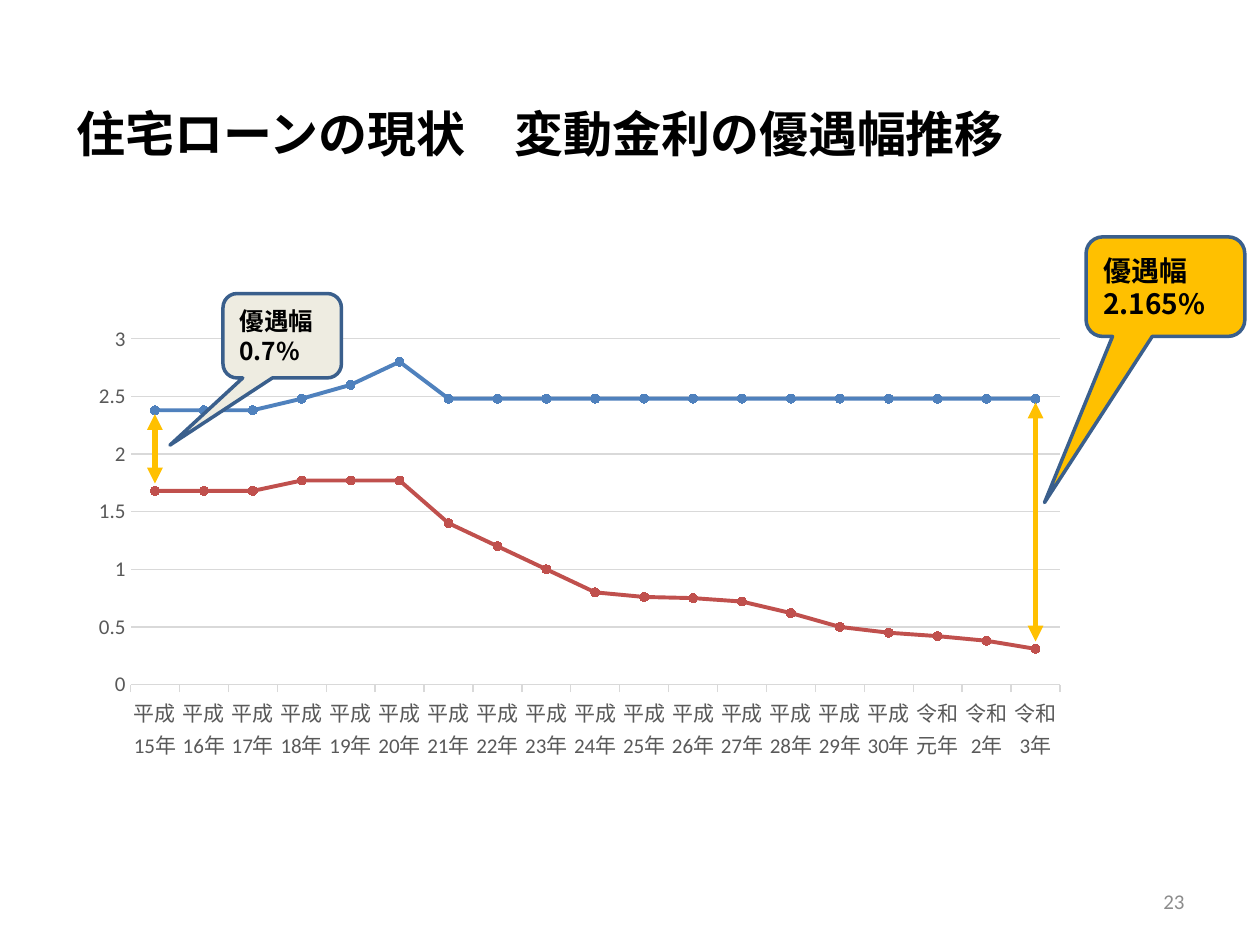
from lxml import etree
from pptx import Presentation
from pptx import util as u
from pptx.chart import data as chart_data
from pptx.dml import color
from pptx.enum import chart as charts, shapes, text
from pptx.oxml import ns

# Content
HEADING = "住宅ローンの現状　変動金利の優遇幅推移"
PAGE = "23"
YEARS = [f"平成{n}年" for n in range(15, 31)] + ["令和元年", "令和2年", "令和3年"]
RATES = {
    "Series 1": [2.38] * 3 + [2.48, 2.6, 2.8] + [2.48] * 13,
    "Series 2": [1.68] * 3 + [1.77] * 3 + [1.4, 1.2, 1, 0.8, 0.76, 0.75, 0.72,
                                           0.62, 0.5, 0.45, 0.42, 0.38, 0.31],
}
# Callouts: lines, box, pointer and corner adjustments, fill, text size
LATEST_GAP = (["優遇幅", "2.165%"], (8.62, 1.88, 1.26, 0.79),
              (-0.762, 2.169, 0.167), "gold", "latest")
FIRST_GAP = (["優遇幅", "0.7%"], (1.77, 2.33, 0.94, 0.67),
             (-0.948, 1.296, 0.167), "cream", "first")

THEME = {
    "colors": {"gold": "FFC000", "cream": "EEECE1", "edge": "3A5F8C", "ink": "000000",
               "axis": "595959", "grid": "D9D9D9", "page": "8C8C8C",
               "Series 1": "4F81BD", "Series 2": "C0504D"},
    "sizes": {"heading": 28, "latest": 16, "first": 14, "axis": 12, "page": 12},
    "latin": "Calibri", "japanese": "Noto Sans CJK JP",
}

# Layout, in inches and as shares of the chart
SLIDE = (10, 7.5)
CHART = (0.67, 1.35, 7.95, 4.8)
PLOT = {"x": 0.046, "y": 0.279, "w": 0.928, "h": 0.572}
TOP_RATE = 3
ARROW_GAPS = (0.03, -0.06)


def rgb(name):
    return color.RGBColor.from_string(THEME["colors"][name])


def inches(values):
    return [u.Inches(v) for v in values]


def apply(target, values):
    for name, value in values.items():
        setattr(target, name, value)


def style_font(font, size, ink, face, bold=False):
    apply(font, {"size": u.Pt(THEME["sizes"][size]), "bold": bold, "name": THEME[face]})
    font.color.rgb = rgb(ink)


def style_line(line, ink, width):
    line.color.rgb = rgb(ink)
    line.width = u.Pt(width)


def write(shape, lines, size, ink="ink", face="japanese", bold=True,
          align=text.PP_ALIGN.LEFT, anchor=text.MSO_ANCHOR.MIDDLE):
    frame = shape.text_frame
    apply(frame, {"word_wrap": True, "vertical_anchor": anchor, "text": "\n".join(lines)})
    for paragraph in frame.paragraphs:
        paragraph.alignment = align
        for run in paragraph.runs:
            style_font(run.font, size, ink, face, bold)
            etree.SubElement(run.font._element, ns.qn("a:ea"), typeface=THEME["japanese"])


def add_rates(slide):
    rates = chart_data.CategoryChartData()
    rates.categories = YEARS
    for name, values in RATES.items():
        rates.add_series(name, values)
    chart = slide.shapes.add_chart(charts.XL_CHART_TYPE.LINE_MARKERS,
                                   *inches(CHART), rates).chart
    apply(chart, {"has_title": False, "has_legend": False})
    style_font(chart.font, "axis", "axis", "latin")

    # Axes and grid
    years, scale = chart.category_axis, chart.value_axis
    apply(years, {"major_tick_mark": charts.XL_TICK_MARK.OUTSIDE})
    apply(scale, {"minimum_scale": 0, "maximum_scale": TOP_RATE, "major_unit": 0.5,
                  "major_tick_mark": charts.XL_TICK_MARK.NONE})
    apply(scale.tick_labels, {"number_format": "General", "number_format_is_linked": False})
    for axis in (years, scale):
        style_font(axis.tick_labels.font, "axis", "axis", "latin")
    style_line(years.format.line, "grid", 0.75)
    scale.format.line.fill.background()
    style_line(scale.major_gridlines.format.line, "grid", 0.75)

    # Series
    chart.plots[0].vary_by_categories = False
    for series in chart.plots[0].series:
        series.smooth = False
        style_line(series.format.line, series.name, 2.25)
        apply(series.marker, {"style": charts.XL_MARKER_STYLE.CIRCLE, "size": 5})
        for part in (series.marker.format.fill, series.marker.format.line.fill):
            part.solid()
            part.fore_color.rgb = rgb(series.name)

    # Fixed plot area
    area = chart._chartSpace.chart.plotArea
    for old in area.findall(ns.qn("c:layout")):
        area.remove(old)
    layout = etree.Element(ns.qn("c:layout"))
    area.insert(0, layout)
    manual = etree.SubElement(layout, ns.qn("c:manualLayout"))
    settings = {"layoutTarget": "inner", "xMode": "edge", "yMode": "edge", **PLOT}
    for tag, value in settings.items():
        etree.SubElement(manual, ns.qn(f"c:{tag}"), val=str(value))


def point(index, rate):
    left, top, width, height = CHART
    x = left + width * (PLOT["x"] + PLOT["w"] * (index + 0.5) / len(YEARS))
    y = top + height * (PLOT["y"] + PLOT["h"] * (1 - rate / TOP_RATE))
    return x, y


def add_gap_arrow(slide, index):
    ends = []
    for values, gap in zip(RATES.values(), ARROW_GAPS):
        x, y = point(index, values[index])
        ends += [x, y + gap]
    arrow = slide.shapes.add_connector(shapes.MSO_CONNECTOR.STRAIGHT, *inches(ends))
    style_line(arrow.line, "gold", 3)
    for end in ("a:headEnd", "a:tailEnd"):
        etree.SubElement(arrow.line._get_or_add_ln(), ns.qn(end), type="triangle")
    etree.SubElement(arrow._element.spPr, ns.qn("a:effectLst"))


def add_callout(slide, lines, box, adjustments, fill, size):
    callout = slide.shapes.add_shape(shapes.MSO_SHAPE.ROUNDED_RECTANGULAR_CALLOUT, *inches(box))
    for i, value in enumerate(adjustments):
        callout.adjustments[i] = value
    callout.shadow.inherit = False
    callout.fill.solid()
    callout.fill.fore_color.rgb = rgb(fill)
    style_line(callout.line, "edge", 2)
    write(callout, lines, size)


def main():
    deck = Presentation()
    deck.slide_width, deck.slide_height = inches(SLIDE)
    slide = deck.slides.add_slide(deck.slide_layouts[6])

    add_rates(slide)
    for index in (len(YEARS) - 1, 0):
        add_gap_arrow(slide, index)
    add_callout(slide, *LATEST_GAP)

    # Heading
    heading = slide.shapes.add_textbox(*inches((0.51, 0.77, 7.87, 0.57)))
    write(heading, [HEADING], "heading", anchor=text.MSO_ANCHOR.TOP)
    add_callout(slide, *FIRST_GAP)

    # Page number
    page = slide.shapes.add_textbox(*inches((7.17, 6.95, 2.33, 0.4)))
    write(page, [PAGE], "page", "page", "latin", False, text.PP_ALIGN.RIGHT)

    deck.save("out.pptx")


if __name__ == "__main__":
    main()
